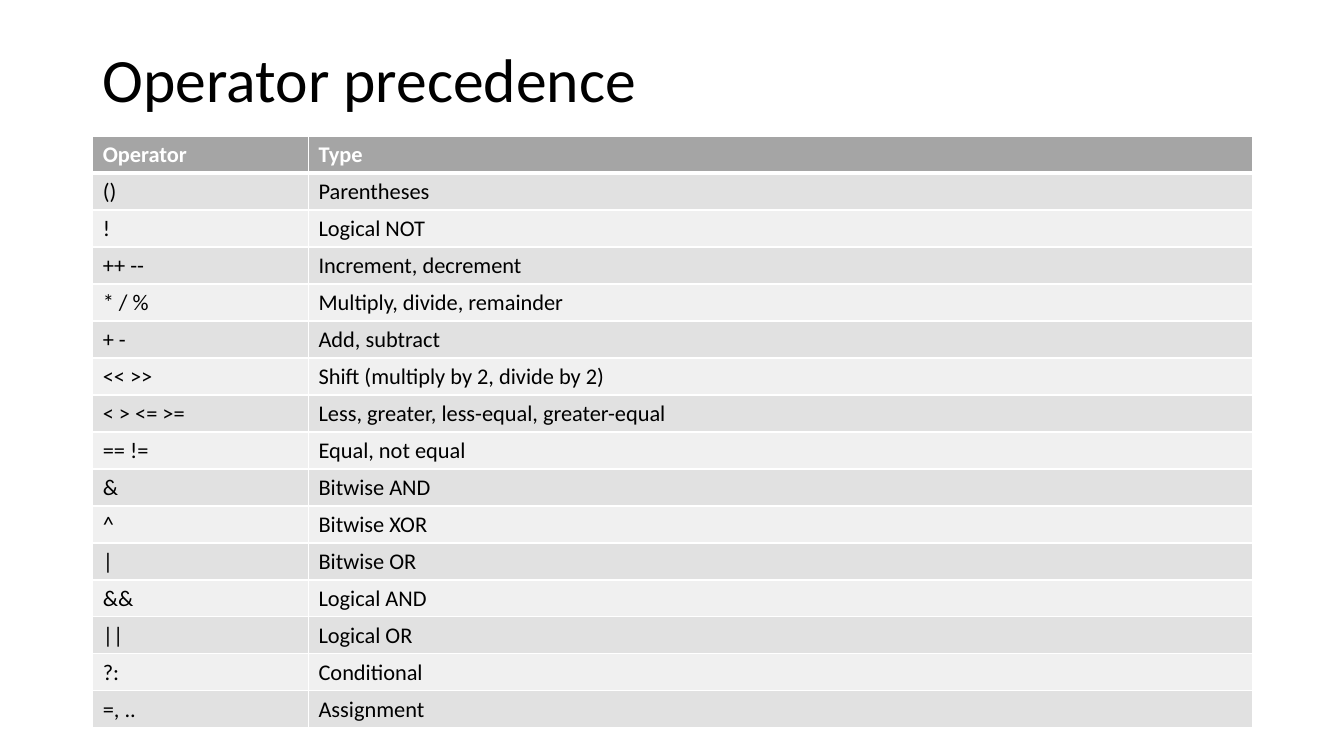
import dataclasses

import pptx
import pptx.dml.color
import pptx.enum.text
import pptx.oxml
import pptx.oxml.ns
import pptx.util

Inches = pptx.util.Inches
FONT = "Calibri"
WHITE, BLACK = "FFFFFF", "000000"
HEAD, DARK, LIGHT = "A5A5A5", "E1E1E1", "F0F0F0"


@dataclasses.dataclass
class Level:
    signs: str
    kind: str


LEVELS = [
    Level("()", "Parentheses"),
    Level("!", "Logical NOT"),
    Level("++ --", "Increment, decrement"),
    Level("* / %", "Multiply, divide, remainder"),
    Level("+ -", "Add, subtract"),
    Level("<< >>", "Shift (multiply by 2, divide by 2)"),
    Level("< > <= >=", "Less, greater, less-equal, greater-equal"),
    Level("== !=", "Equal, not equal"),
    Level("&", "Bitwise AND"),
    Level("^", "Bitwise XOR"),
    Level("|", "Bitwise OR"),
    Level("&&", "Logical AND"),
    Level("||", "Logical OR"),
    Level("?:", "Conditional"),
    Level("=, ..", "Assignment"),
]


def color(code: str) -> pptx.dml.color.RGBColor:
    return pptx.dml.color.RGBColor.from_string(code)


def write(frame, text: str, size: float, ink: str, bold: bool = False) -> None:
    frame.text = text
    for run in frame.paragraphs[0].runs:
        run.font.name = FONT
        run.font.size = pptx.util.Pt(size)
        run.font.bold = bold
        run.font.color.rgb = color(ink)


def border(cell, side: str, width: float) -> None:
    line = pptx.oxml.parse_xml(
        f'<a:ln{side} {pptx.oxml.ns.nsdecls("a")} w="{pptx.util.Pt(width)}">'
        f'<a:solidFill><a:srgbClr val="{WHITE}"/></a:solidFill></a:ln{side}>'
    )
    cell._tc.get_or_add_tcPr().append(line)


def style(cell, row: int) -> None:
    """Draw the borders and the fill of a cell in the given row."""
    thick = {(0, "B"), (1, "T")}
    for side in "LRTB":
        border(cell, side, 3 if (row, side) in thick else 1)
    cell.fill.solid()
    fill = HEAD if row == 0 else DARK if row % 2 else LIGHT
    cell.fill.fore_color.rgb = color(fill)


def add_title(slide, text: str) -> None:
    box = slide.shapes.add_textbox(
        Inches(0.92), Inches(0.4), Inches(11.5), Inches(0.83)
    )
    frame = box.text_frame
    frame.word_wrap = True
    frame.vertical_anchor = pptx.enum.text.MSO_ANCHOR.MIDDLE
    write(frame, text, 44, BLACK)
    frame.paragraphs[0].line_spacing = 0.9


def add_grid(slide, levels: list[Level]) -> None:
    rows = [Level("Operator", "Type"), *levels]
    shape = slide.shapes.add_table(
        len(rows), 2, Inches(0.92), Inches(1.35), Inches(11.5), Inches(5.87)
    )
    table = shape.table
    for column, width in zip(table.columns, (2.14, 9.36)):
        column.width = Inches(width)
    for row, level in enumerate(rows):
        table.rows[row].height = Inches(0.35)
        for col, text in enumerate((level.signs, level.kind)):
            cell = table.cell(row, col)
            ink = BLACK if row else WHITE
            write(cell.text_frame, text, 16, ink, bold=row == 0)
            style(cell, row)
    shape.height = Inches(5.87)


def main() -> None:
    deck = pptx.Presentation()
    deck.slide_width = Inches(13.33)
    deck.slide_height = Inches(7.5)
    slide = deck.slides.add_slide(deck.slide_layouts[6])
    add_title(slide, "Operator precedence")
    add_grid(slide, LEVELS)
    deck.save("out.pptx")


if __name__ == "__main__":
    main()
